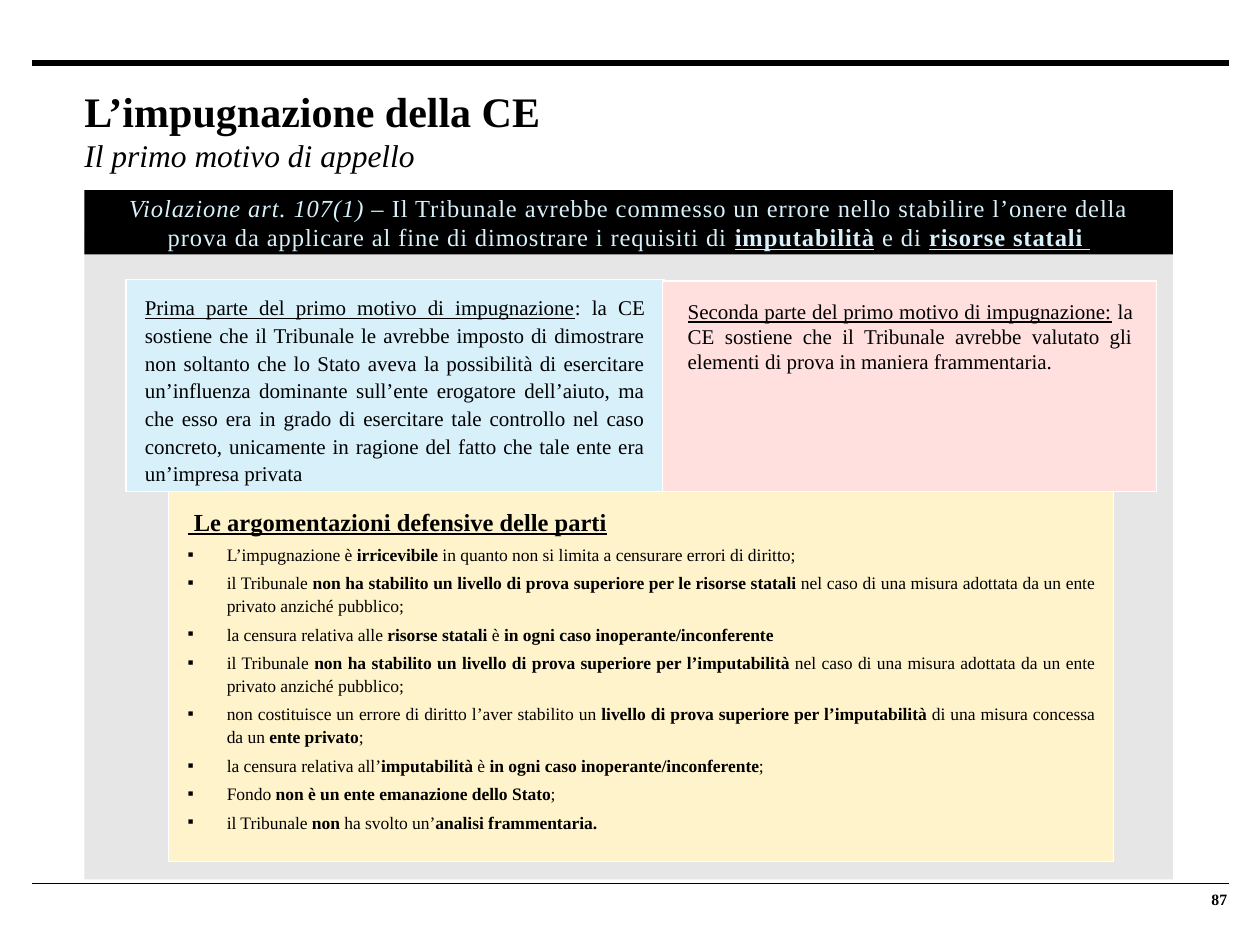
from lxml.etree import SubElement
from pptx import Presentation
from pptx.dml.color import RGBColor
from pptx.enum.shapes import MSO_CONNECTOR, MSO_SHAPE
from pptx.enum.text import MSO_ANCHOR, PP_ALIGN
from pptx.oxml.ns import qn
from pptx.util import Inches, Pt

HEX = {
    "black": "000000", "white": "FFFFFF", "grey": "E6E6E6",
    "blue": "D7F0FA", "pink": "FFE0DF", "cream": "FFF3CB",
}
FACE = "Times New Roman"
FLAGS = {"b": "bold", "i": "italic", "u": "underline"}
JUST = {"alignment": PP_ALIGN.JUSTIFY}
LOOSE = {**JUST, "line_spacing": 1.1}
ITEM = {**LOOSE, "space_after": Pt(3)}
ZERO = (0, 0)
PAD = (0.15, 0.1)
THIN = (0.1, 0.05)

HEAD = [
    ("Violazione art. 107(1) – ", "i"),
    ("Il Tribunale avrebbe commesso un errore nello stabilire l’onere della "
     "prova da applicare al fine di dimostrare i requisiti di ", ""),
    ("imputabilità", "bu"), (" e di ", ""), ("risorse statali ", "bu"),
]
FIRST = [
    ("Prima parte del primo motivo di impugnazione", "u"),
    (": la CE sostiene che il Tribunale le avrebbe imposto di dimostrare non "
     "soltanto che lo Stato aveva la possibilità di esercitare un’influenza "
     "dominante sull’ente erogatore dell’aiuto, ma che esso era in grado di "
     "esercitare tale controllo nel caso concreto, unicamente in ragione del "
     "fatto che tale ente era un’impresa privata", ""),
]
SECOND = [
    ("Seconda parte del primo motivo di impugnazione:", "u"),
    (" la CE sostiene che il Tribunale avrebbe valutato gli elementi di prova "
     "in maniera frammentaria.", ""),
]
CASE = (" nel caso di una misura adottata da un ente privato anziché pubblico;", "")
POINTS = [
    [("L’impugnazione è ", ""), ("irricevibile", "b"),
     (" in quanto non si limita a censurare errori di diritto;", "")],
    [("il Tribunale ", ""),
     ("non ha stabilito un livello di prova superiore per le risorse statali", "b"),
     CASE],
    [("la censura relativa alle ", ""), ("risorse statali ", "b"), ("è ", ""),
     ("in ogni caso inoperante/inconferente", "b")],
    [("il Tribunale ", ""),
     ("non ha stabilito un livello di prova superiore per l’imputabilità", "b"),
     CASE],
    [("non costituisce un errore di diritto l’aver stabilito un ", ""),
     ("livello di prova superiore per l’imputabilità ", "b"),
     ("di una misura concessa da un ", ""), ("ente privato", "b"), (";", "")],
    [("la censura relativa all’", ""), ("imputabilità", "b"), (" è ", ""),
     ("in ogni caso inoperante/inconferente", "b"), (";", "")],
    [("Fondo ", ""), ("non è un ente emanazione dello Stato", "b"), (";", "")],
    [("il Tribunale", ""), (" non ", "b"), ("ha svolto un’", ""),
     ("analisi frammentaria.", "b")],
]


def tint(name):
    """Return the named colour."""
    return RGBColor.from_string(HEX[name])


def add_rule(slide, top, width):
    """Draw a rule across the slide."""
    rule = slide.shapes.add_connector(
        MSO_CONNECTOR.STRAIGHT, Inches(0.25), Inches(top), Inches(9.75), Inches(top))
    rule.line.color.rgb = tint("black")
    rule.line.width = Pt(width)
    SubElement(rule._element.spPr, qn("a:effectLst"))


def add_panel(slide, place, fill, edge=None):
    """Draw a filled rectangle with an optional thin edge."""
    panel = slide.shapes.add_shape(MSO_SHAPE.RECTANGLE, *map(Inches, place))
    panel.shadow.inherit = False
    panel.fill.solid()
    panel.fill.fore_color.rgb = tint(fill)
    if edge:
        panel.line.color.rgb = tint(edge)
        panel.line.width = Pt(0.75)
    else:
        panel.line.fill.background()
    return panel


def add_box(slide, place):
    """Place a text box."""
    return slide.shapes.add_textbox(*map(Inches, place))


def set_frame(shape, pad, anchor=MSO_ANCHOR.TOP):
    """Set wrap, anchor and margins, and return the text frame."""
    frame = shape.text_frame
    side, edge = map(Inches, pad)
    form = {"word_wrap": True, "vertical_anchor": anchor,
            "margin_left": side, "margin_right": side,
            "margin_top": edge, "margin_bottom": edge}
    for key, value in form.items():
        setattr(frame, key, value)
    return frame


def add_para(frame, runs, size, form, color="black", track=0):
    """Write one paragraph of flagged runs."""
    para = frame.paragraphs[0]
    if para.runs:
        para = frame.add_paragraph()
    for key, value in form.items():
        setattr(para, key, value)
    for text, flags in runs:
        run = para.add_run()
        run.text = text
        look = {"name": FACE, "size": Pt(size)}
        look.update({name: flag in flags for flag, name in FLAGS.items()})
        for key, value in look.items():
            setattr(run.font, key, value)
        run.font.color.rgb = tint(color)
        if track:
            run.font._element.set("spc", str(track))
    return para


def add_point(frame, runs):
    """Write one bulleted paragraph."""
    para = add_para(frame, runs, 10, ITEM)
    props = para._p.get_or_add_pPr()
    props.set("marL", str(Inches(0.31)))
    props.set("indent", str(Inches(-0.31)))
    SubElement(props, qn("a:buFont")).set("typeface", FACE)
    SubElement(props, qn("a:buChar")).set("char", "▪")


def main():
    """Build and save the slide."""
    deck = Presentation()
    deck.slide_width, deck.slide_height = Inches(10), Inches(7.5)
    slide = deck.slides.add_slide(deck.slide_layouts[6])

    page = set_frame(add_box(slide, (9.08, 7.01, 0.66, 0.26)), ZERO, MSO_ANCHOR.MIDDLE)
    add_para(page, [("87", "b")], 9, {"alignment": PP_ALIGN.RIGHT})
    add_rule(slide, 0.5, 3)
    add_rule(slide, 7.01, 0.5)

    title = set_frame(add_box(slide, (0.67, 0.68, 9.5, 0.99)), ZERO)
    add_para(title, [("L’impugnazione della CE", "b")], 24, {})
    add_para(title, [("Il primo motivo di appello", "i")], 18, {})

    add_panel(slide, (0.67, 1.8, 8.64, 5.18), "grey")
    band = add_panel(slide, (0.67, 1.51, 8.64, 0.51), "black")
    add_para(set_frame(band, THIN, MSO_ANCHOR.MIDDLE), HEAD, 14,
             {"alignment": PP_ALIGN.CENTER}, "blue", 50)

    left = add_panel(slide, (1, 2.22, 4.27, 1.68), "blue", "white")
    add_para(set_frame(left, PAD), FIRST, 12, LOOSE)
    add_panel(slide, (5.26, 2.23, 3.92, 1.67), "pink", "white")
    right = add_box(slide, (5.36, 2.32, 3.73, 0.91))
    add_para(set_frame(right, THIN), SECOND, 12, JUST)

    reply = add_panel(slide, (1.34, 3.9, 7.5, 2.94), "cream", "white")
    frame = set_frame(reply, PAD)
    add_para(frame, [(" Le argomentazioni defensive delle parti", "bu")], 14, ITEM)
    for runs in POINTS:
        add_point(frame, runs)

    deck.save("out.pptx")


if __name__ == "__main__":
    main()
